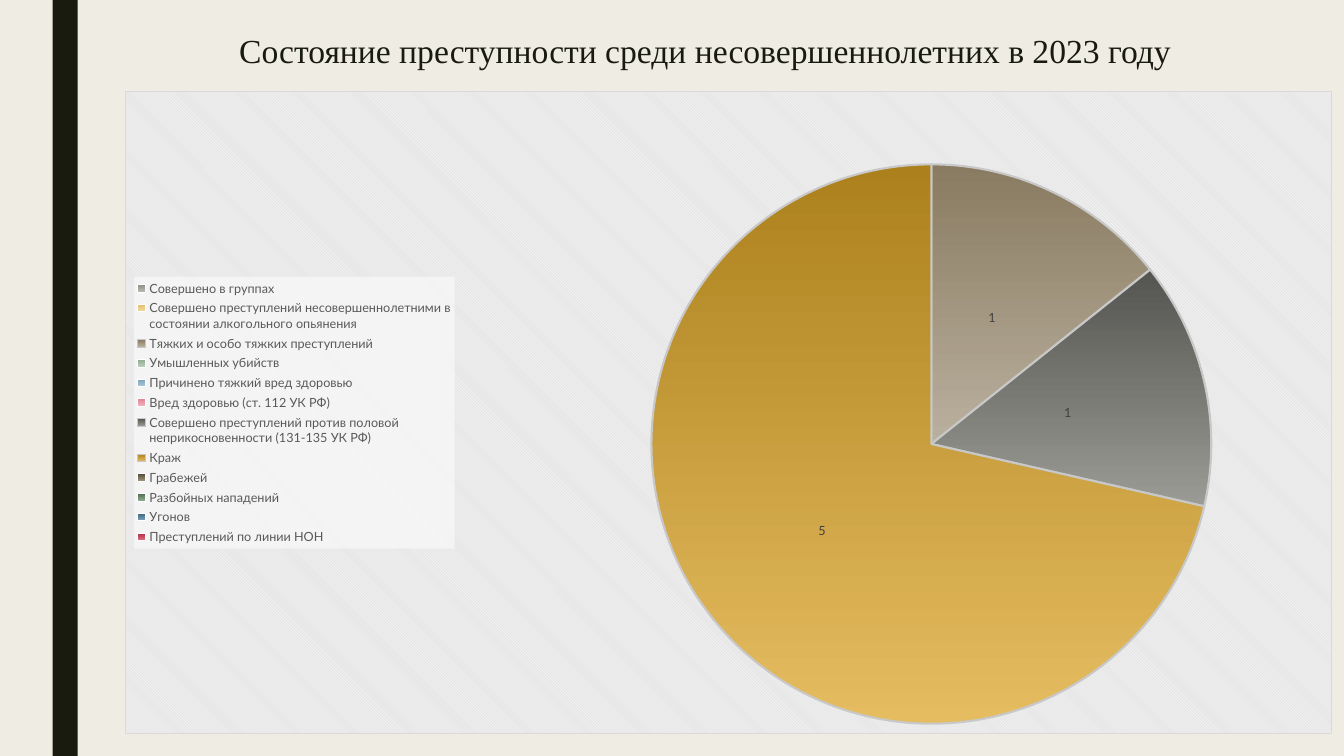
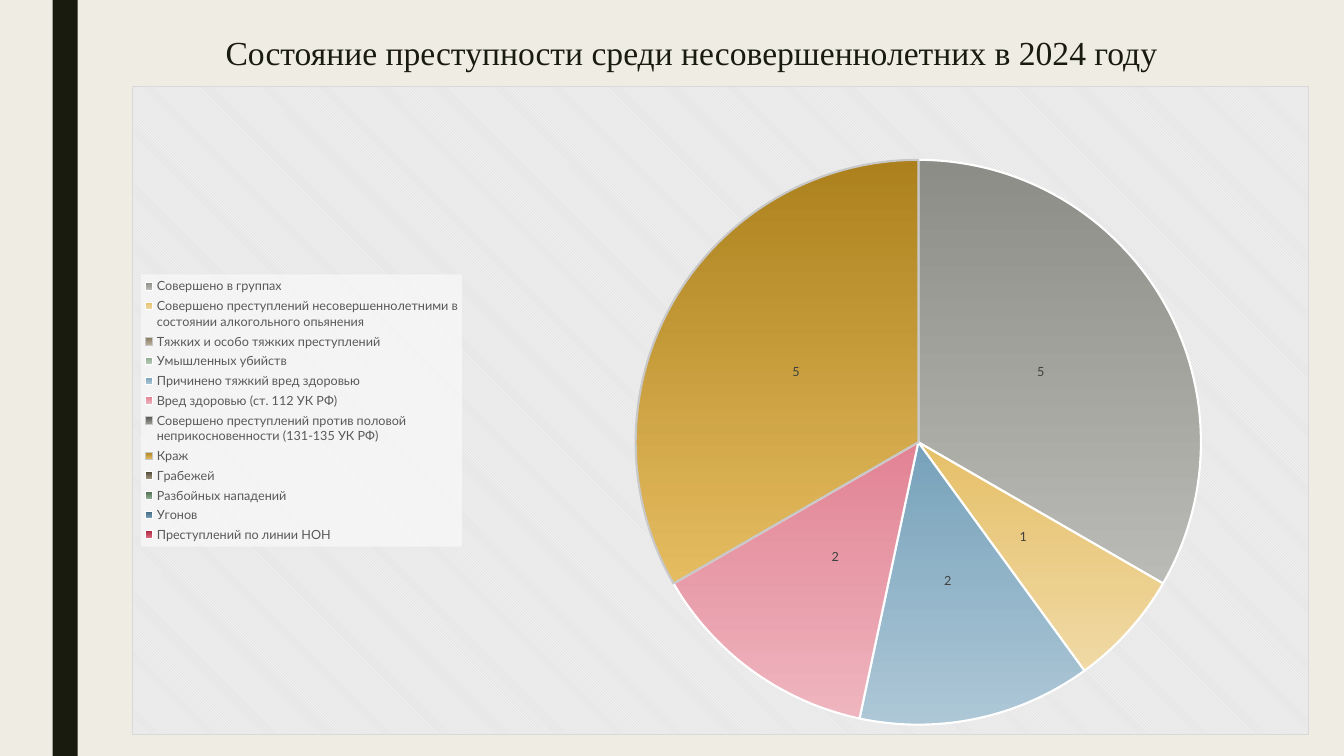
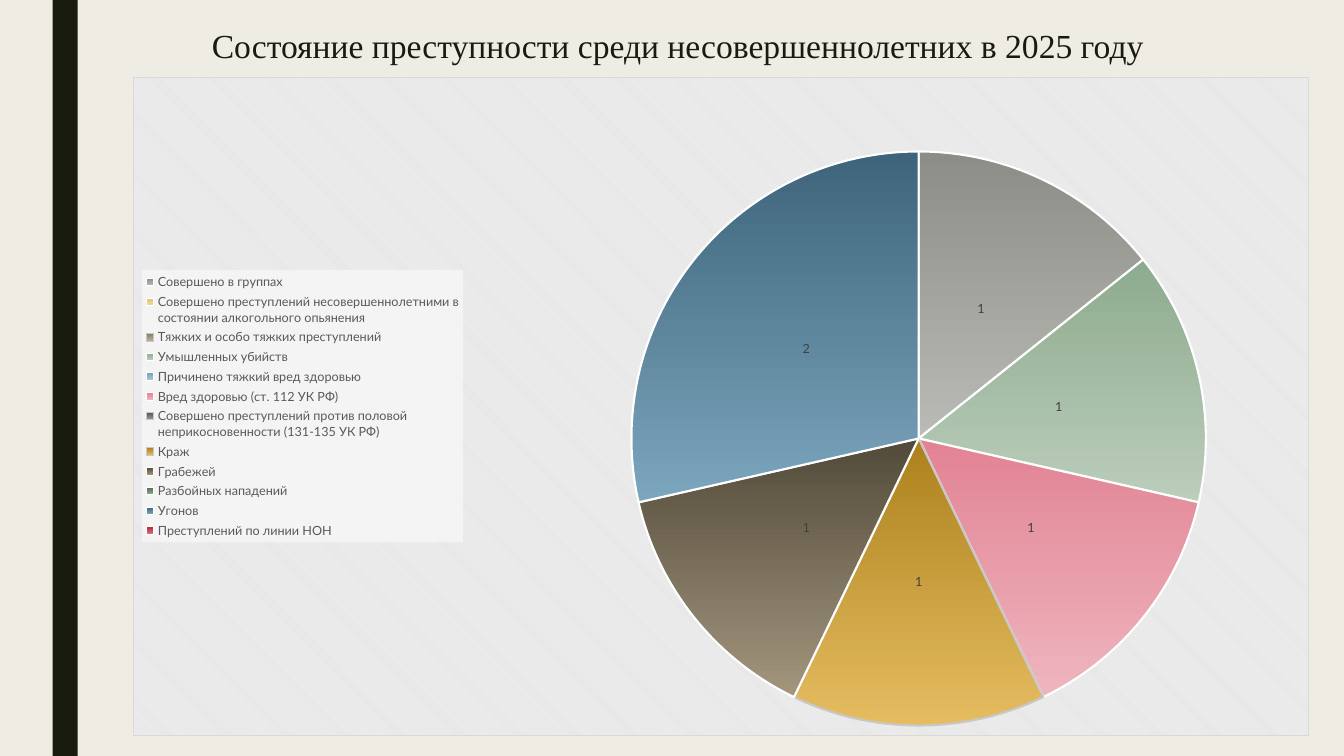
from pptx import Presentation
from pptx.chart.data import CategoryChartData
from pptx.dml.color import RGBColor
from pptx.enum.chart import XL_CHART_TYPE, XL_LABEL_POSITION, XL_LEGEND_POSITION
from pptx.enum.shapes import MSO_SHAPE
from pptx.enum.text import MSO_ANCHOR, PP_ALIGN
from pptx.oxml import parse_xml
from pptx.oxml.ns import nsdecls
from pptx.util import Emu, Pt

PIE = XL_CHART_TYPE.PIE
LABEL_CENTER = XL_LABEL_POSITION.CENTER
LEGEND_LEFT = XL_LEGEND_POSITION.LEFT
RECTANGLE = MSO_SHAPE.RECTANGLE
TOP = MSO_ANCHOR.TOP
CENTER = PP_ALIGN.CENTER

EMU_PER_PX = 9525
WIDTH, HEIGHT = 1280, 720

# Colours and fonts
CREAM = RGBColor(0xEF, 0xED, 0xE3)
INK = RGBColor(0x19, 0x1B, 0x0E)
BLACK = RGBColor(0x00, 0x00, 0x00)
WHITE = RGBColor(0xFF, 0xFF, 0xFF)
LABEL_GRAY = RGBColor(0x40, 0x40, 0x40)
LEGEND_GRAY = RGBColor(0x59, 0x59, 0x59)
EDGE_GRAY = RGBColor(0xC8, 0xC8, 0xC8)
PANEL_GRAY = RGBColor(0xE6, 0xE6, 0xE6)
BORDER_GRAY = RGBColor(0xD9, 0xD9, 0xD9)
TITLE_FONT = "Times New Roman"
CHART_FONT = "Lato"

# Each category: name, gradient top, gradient bottom, slice outline
CATEGORIES = [
    ("Совершено в группах",
     RGBColor(0x8C, 0x8D, 0x86), RGBColor(0xBA, 0xBB, 0xB6), WHITE),
    ("Совершено преступлений несовершеннолетними в состоянии алкогольного опьянения",
     RGBColor(0xE6, 0xC0, 0x69), RGBColor(0xF0, 0xD9, 0xA5), WHITE),
    ("Тяжких и особо тяжких преступлений",
     RGBColor(0x89, 0x7B, 0x61), RGBColor(0xBA, 0xB0, 0x9E), EDGE_GRAY),
    ("Умышленных убийств",
     RGBColor(0x8D, 0xAB, 0x8E), RGBColor(0xBB, 0xCD, 0xBB), WHITE),
    ("Причинено тяжкий вред здоровью",
     RGBColor(0x77, 0xA2, 0xBB), RGBColor(0xAD, 0xC7, 0xD6), WHITE),
    ("Вред здоровью (ст. 112 УК РФ)",
     RGBColor(0xE2, 0x83, 0x94), RGBColor(0xEE, 0xB5, 0xBF), WHITE),
    ("Совершено преступлений против половой неприкосновенности (131-135 УК РФ)",
     RGBColor(0x54, 0x55, 0x50), RGBColor(0x9A, 0x9B, 0x94), EDGE_GRAY),
    ("Краж",
     RGBColor(0xAC, 0x81, 0x1D), RGBColor(0xE5, 0xBC, 0x60), EDGE_GRAY),
    ("Грабежей",
     RGBColor(0x52, 0x4A, 0x3A), RGBColor(0xA3, 0x96, 0x7D), WHITE),
    ("Разбойных нападений",
     RGBColor(0x4F, 0x6C, 0x50), RGBColor(0x8F, 0xAD, 0x90), WHITE),
    ("Угонов",
     RGBColor(0x3D, 0x64, 0x7A), RGBColor(0x7C, 0xA6, 0xBE), WHITE),
    ("Преступлений по линии НОН",
     RGBColor(0xAE, 0x29, 0x40), RGBColor(0xDD, 0x6F, 0x83), WHITE),
]

# Each year: title box, chart box, values by category
YEARS = {
    2023: ((171, 28, 1001, 57), (119, 87, 1150, 612),
           (0, 0, 1, 0, 0, 0, 1, 5, 0, 0, 0, 0)),
    2024: ((173, 30, 971, 52), (126, 82, 1121, 618),
           (5, 1, 0, 0, 2, 2, 0, 5, 0, 0, 0, 0)),
    2025: ((155, 24, 981, 48), (127, 73, 1120, 628),
           (1, 0, 0, 1, 0, 1, 0, 1, 1, 0, 2, 0)),
}

PANEL_XML = f"""<c:spPr {nsdecls("c", "a")}>
  <a:pattFill prst="dkDnDiag">
    <a:fgClr><a:srgbClr val="{WHITE}"/></a:fgClr>
    <a:bgClr><a:srgbClr val="{PANEL_GRAY}"/></a:bgClr>
  </a:pattFill>
  <a:ln w="9525"><a:solidFill><a:srgbClr val="{BORDER_GRAY}"/></a:solidFill></a:ln>
</c:spPr>"""

LEGEND_XML = f"""<c:spPr {nsdecls("c", "a")}>
  <a:solidFill><a:srgbClr val="{WHITE}"><a:alpha val="50000"/></a:srgbClr></a:solidFill>
  <a:ln><a:noFill/></a:ln>
</c:spPr>"""

PLOT_LAYOUT_XML = f"""<c:layout {nsdecls("c")}><c:manualLayout>
  <c:layoutTarget val="inner"/><c:xMode val="edge"/><c:yMode val="edge"/>
  <c:x val="0.384"/><c:y val="0.113"/><c:w val="0.568"/><c:h val="0.872"/>
</c:manualLayout></c:layout>"""


def px(*lengths):
    return [Emu(length * EMU_PER_PX) for length in lengths]


def style_font(font, name, size, color):
    font.name = name
    font.size = Pt(size)
    font.color.rgb = color


class Deck:
    def __init__(self):
        self.presentation = Presentation()
        self.presentation.slide_width, self.presentation.slide_height = px(WIDTH, HEIGHT)
        background = self.presentation.slide_master.background.fill
        background.solid()
        background.fore_color.rgb = CREAM
        self.slide = None

    def add_slide(self):
        self.slide = self.presentation.slides.add_slide(self.presentation.slide_layouts[6])
        self.add_band(50, 0, 24, HEIGHT)

    def add_band(self, *box):
        band = self.slide.shapes.add_shape(RECTANGLE, *px(*box))
        band.shadow.inherit = False
        band.fill.solid()
        band.fill.fore_color.rgb = INK
        band.line.fill.background()

    def add_title(self, text, box):
        frame = self.slide.shapes.add_textbox(*px(*box)).text_frame
        frame.word_wrap = True
        frame.vertical_anchor = TOP
        paragraph = frame.paragraphs[0]
        paragraph.alignment = CENTER
        paragraph.line_spacing = 0.89
        run = paragraph.add_run()
        run.text = text
        style_font(run.font, TITLE_FONT, 24, INK)

    def add_pie(self, values, box):
        data = CategoryChartData()
        data.categories = [name for name, *_ in CATEGORIES]
        data.add_series("Series 1", values)
        chart = self.slide.shapes.add_chart(PIE, *px(*box), data).chart
        chart.has_title = False
        style_font(chart.font, CHART_FONT, 10, BLACK)

        # Legend
        chart.has_legend = True
        chart.legend.position = LEGEND_LEFT
        chart.legend.include_in_layout = False
        style_font(chart.legend.font, CHART_FONT, 9, LEGEND_GRAY)

        # Slices
        plot = chart.plots[0]
        plot.vary_by_categories = True
        for index, (_, top, bottom, outline) in enumerate(CATEGORIES):
            slice_format = plot.series[0].points[index].format
            slice_format.fill.gradient()
            slice_format.fill.gradient_angle = 270
            for stop, color in zip(slice_format.fill.gradient_stops, (top, bottom)):
                stop.color.rgb = color
            slice_format.line.color.rgb = outline
            slice_format.line.width = Pt(1.5)

        # Value labels, with zeros hidden
        plot.has_data_labels = True
        labels = plot.data_labels
        labels.show_value = True
        labels.show_percentage = False
        labels.position = LABEL_CENTER
        labels.number_format = "0;;;"
        labels.number_format_is_linked = False
        style_font(labels.font, CHART_FONT, 9, LABEL_GRAY)

        # Patterned panel, translucent legend and fixed plot area
        chart_element = chart.element.xpath("c:chart")[0]
        chart_element.addnext(parse_xml(PANEL_XML))
        chart_element.xpath("c:legend/c:overlay")[0].addnext(parse_xml(LEGEND_XML))
        plot_area = chart_element.xpath("c:plotArea")[0]
        for layout in plot_area.xpath("c:layout"):
            plot_area.remove(layout)
        plot_area.insert(0, parse_xml(PLOT_LAYOUT_XML))


def main():
    deck = Deck()
    for year, (title_box, chart_box, values) in YEARS.items():
        deck.add_slide()
        deck.add_title(
            f"Состояние преступности среди несовершеннолетних в {year} году", title_box)
        deck.add_pie(values, chart_box)
    deck.presentation.save("out.pptx")


if __name__ == "__main__":
    main()
